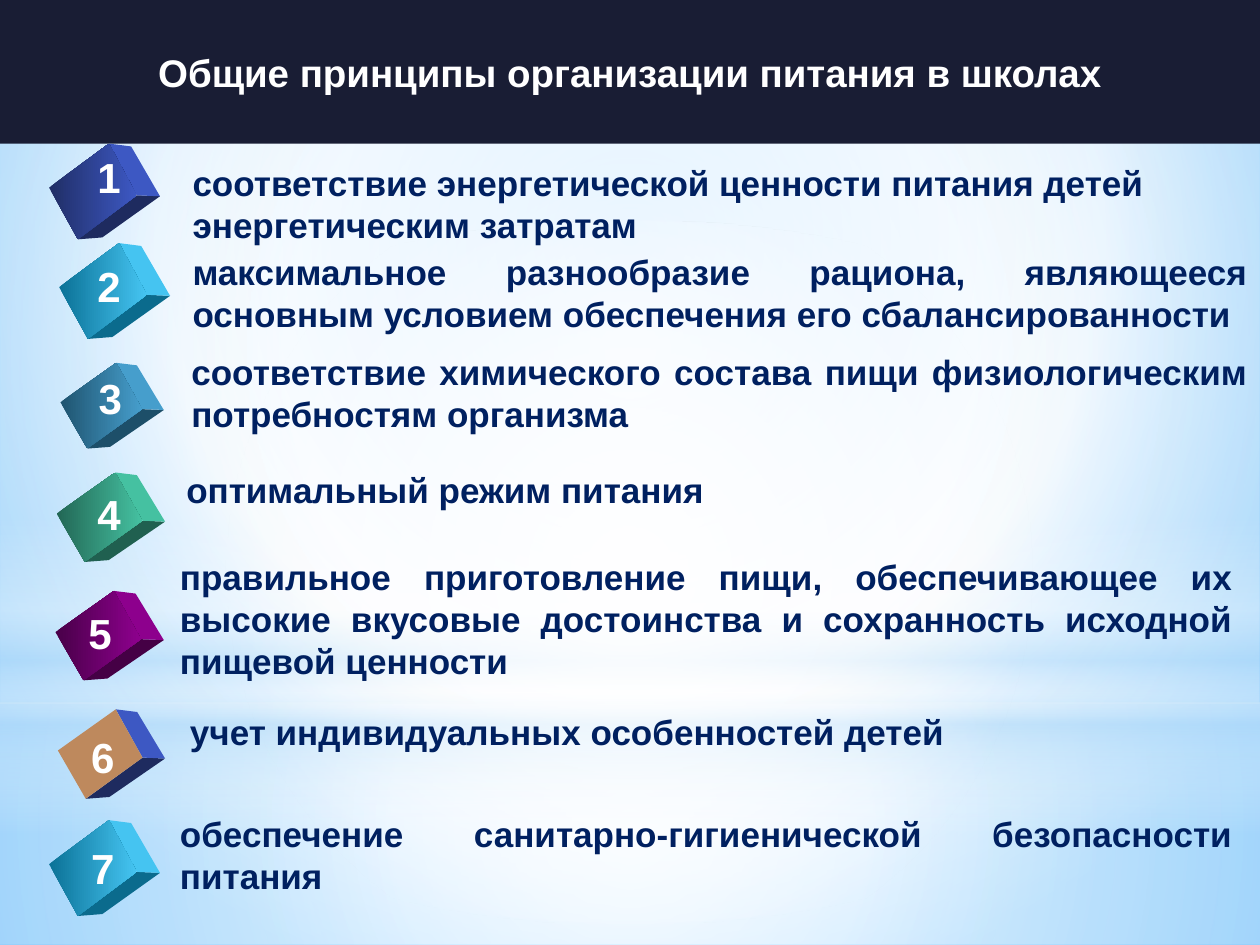
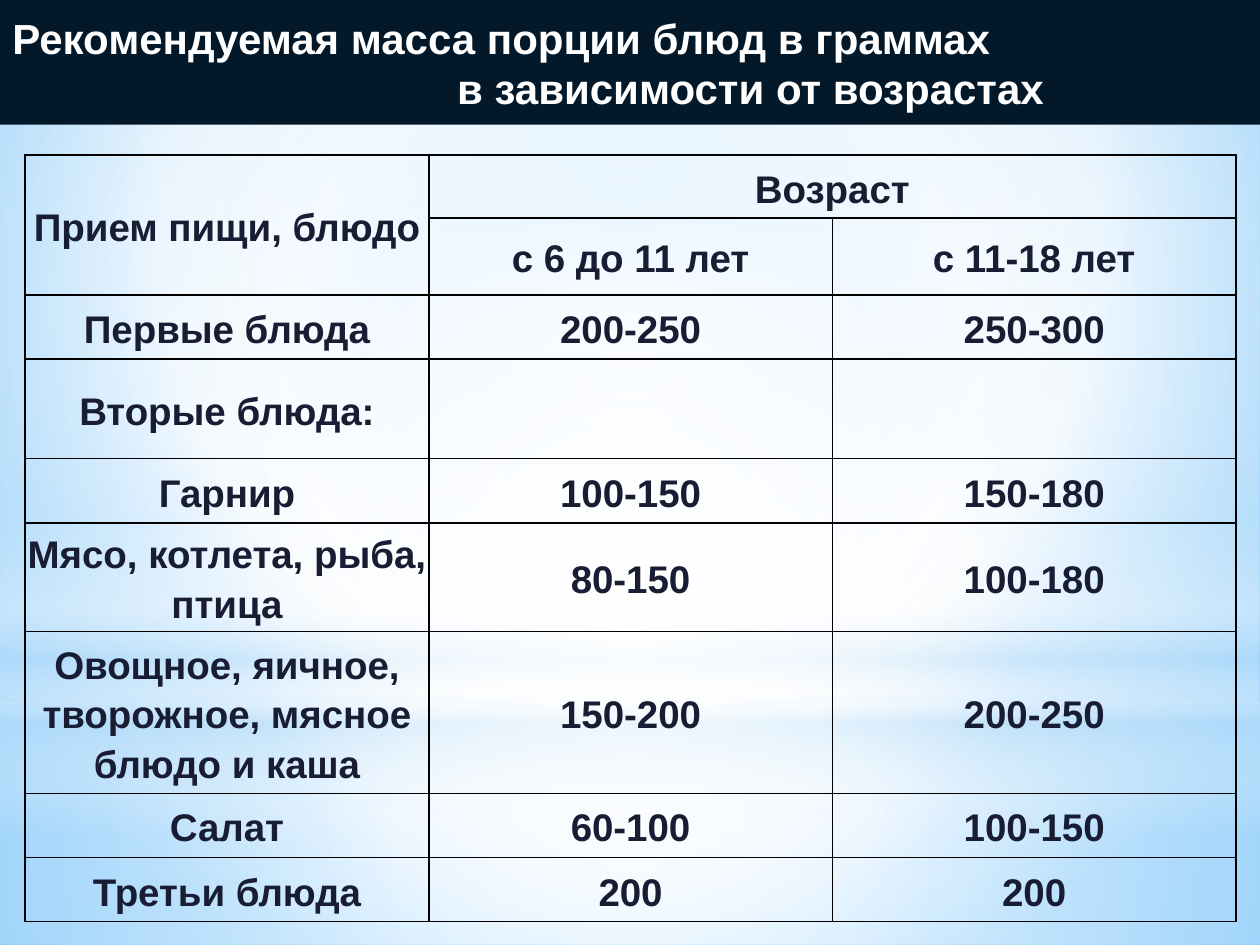
from lxml.etree import SubElement
from pptx import Presentation
from pptx.dml.color import RGBColor
from pptx.enum.shapes import MSO_SHAPE as SHAPE
from pptx.enum.text import MSO_ANCHOR as ANCHOR, PP_ALIGN as ALIGN
from pptx.oxml.ns import qn
from pptx.util import Inches, Pt

rgb = RGBColor.from_string
WHITE, NAVY, INK, BAND2 = "FFFFFF", "002060", "191D34", "031828"
SKY, SKY_DARK, MIST = "9ED5FF", "5BB9FF", "B4DCFA"
LEFT, CENTER, JUSTIFY = ALIGN.LEFT, ALIGN.CENTER, ALIGN.JUSTIFY


def set_gradient(el, stops, center=None):
    g = next(el.iter(qn("a:gradFill")))
    for child in list(g):
        g.remove(child)
    lst = SubElement(g, qn("a:gsLst"))
    for pos, color, alpha in stops:
        gs = SubElement(lst, qn("a:gs"), pos=str(pos * 1000))
        clr = SubElement(gs, qn("a:srgbClr"), val=color)
        SubElement(clr, qn("a:alpha"), val=str(alpha * 1000))
    if center:
        path = SubElement(g, qn("a:path"), path="circle")
        sides = {k: str(v * 1000) for k, v in zip("ltrb", center)}
        SubElement(path, qn("a:fillToRect"), **sides)
    else:
        SubElement(g, qn("a:lin"), ang="5400000", scaled="0")


def write(p, text, size, color, align):
    p.alignment = align
    r = p.add_run()
    r.text = text
    for k, v in {"name": "Arial", "size": Pt(size), "bold": True}.items():
        setattr(r.font, k, v)
    r.font.color.rgb = rgb(color)


prs = Presentation()
prs.slide_width, prs.slide_height = Inches(10), Inches(7.5)
blank = prs.slide_layouts[6]
s1, s2 = [prs.slides.add_slide(blank) for _ in range(2)]

master = prs.slide_master
master.background.fill.gradient()
set_gradient(master.element, [(0, SKY, 100), (60, WHITE, 100), (100, SKY_DARK, 100)],
             (20, 10, 20, 60))
middle = (50, 50, 50, 50)
glows = [
    (SHAPE.RECTANGLE, 5.58, 1.92, [(0, WHITE, 91), (37, WHITE, 76), (100, MIST, 79)], middle),
    (SHAPE.RECTANGLE, 0, 5.58, [(0, WHITE, 89), (48, WHITE, 62), (100, MIST, 79)], middle),
    (SHAPE.RECTANGLE, 4.12, 2.5, [(0, WHITE, 0), (29, WHITE, 30), (45, MIST, 40),
                                  (55, WHITE, 26), (65, MIST, 60), (100, WHITE, 0)], None),
    (SHAPE.OVAL, 1.75, 5.58, [(0, WHITE, 100), (56, WHITE, 0)], middle),
]
for i, (kind, y, h, stops, center) in enumerate(glows):
    sp = s1.shapes.add_shape(kind, 0, Inches(y), Inches(10), Inches(h))
    sp.shadow.inherit = False
    sp.line.fill.background()
    sp.fill.gradient()
    set_gradient(sp.element, stops, center)
    master.shapes.element.insert(2 + i, sp.element)

bands = [
    (s1, 1.14, INK, 22, [("Общие принципы организации питания в школах", CENTER, 0)]),
    (s2, 0.99, BAND2, 24, [("Рекомендуемая масса порции блюд в граммах", LEFT, 0),
                           ("в зависимости от возрастах", LEFT, 3.53)]),
]
for s, h, color, size, lines in bands:
    sp = s.shapes.add_shape(SHAPE.RECTANGLE, 0, 0, Inches(10), Inches(h))
    sp.shadow.inherit = False
    sp.fill.solid()
    sp.fill.fore_color.rgb = rgb(color)
    sp.line.fill.background()
    tf = sp.text_frame
    tf.vertical_anchor = ANCHOR.MIDDLE
    for i, (text, align, indent) in enumerate(lines):
        p = tf.add_paragraph() if i else tf.paragraphs[0]
        write(p, text, size, WHITE, align)
        p.line_spacing = 1.0
        if indent:
            p._p.get_or_add_pPr().set("marL", str(Inches(indent)))

BLUE, CYAN = "4E67C8", "5ECCF3"
principles = [
    ((0.39, 1.14, 0.88, 0.76), BLUE, BLUE, (0.67, 1.15), (1.43, 1.23, 8.57, 0.77), LEFT,
     "соответствие энергетической ценности питания детей энергетическим затратам"),
    ((0.47, 1.93, 0.88, 0.76), CYAN, CYAN, (0.67, 2.02), (1.43, 1.94, 8.57, 0.77), JUSTIFY,
     "максимальное разнообразие рациона, являющееся основным условием обеспечения его сбалансированности"),
    ((0.48, 2.88, 0.82, 0.68), "59A8D1", "59A8D1", (0.68, 2.91), (1.42, 2.73, 8.58, 0.77), JUSTIFY,
     "соответствие химического состава пищи физиологическим потребностям организма"),
    ((0.45, 3.75, 0.86, 0.71), "56C7AA", "56C7AA", (0.67, 3.83), (1.38, 3.67, 7.55, 0.44), LEFT,
     "оптимальный режим питания"),
    ((0.44, 4.69, 0.86, 0.71), "990099", "990099", (0.6, 4.77), (1.33, 4.36, 8.55, 1.11), JUSTIFY,
     "правильное приготовление пищи, обеспечивающее их высокие вкусовые достоинства "
     "и сохранность исходной пищевой ценности"),
    ((0.46, 5.63, 0.85, 0.71), "BE895D", BLUE, (0.62, 5.76), (1.41, 5.59, 6.43, 0.44), LEFT,
     "учет индивидуальных особенностей детей"),
    ((0.39, 6.51, 0.88, 0.76), CYAN, CYAN, (0.62, 6.64), (1.33, 6.4, 8.55, 0.77), JUSTIFY,
     "обеспечение санитарно-гигиенической безопасности питания"),
]
front = [(0, 0.46), (0.54, 0), (0.79, 0.54), (0.26, 1)]
side = [(0.54, 0), (0.74, 0.03), (1, 0.55), (0.79, 0.54)]
bottom = [(0.26, 1), (0.79, 0.54), (1, 0.55), (0.48, 0.98)]
for n, (cube, face, edge, digit_at, box, align, text) in enumerate(principles, 1):
    x, y, w, h = cube
    for points, color, shade in [(bottom, edge, -0.55), (side, edge, -0.08), (front, face, 0)]:
        pts = [(Inches(x + w * u), Inches(y + h * v)) for u, v in points]
        fb = s1.shapes.build_freeform(*pts[0])
        fb.add_line_segments(pts[1:])
        sp = fb.convert_to_shape()
        sp.shadow.inherit = False
        sp.line.fill.background()
        if points is front and face == edge:
            sp.fill.gradient()
            sp.fill.gradient_angle = 0
            for stop, dark in zip(sp.fill.gradient_stops, (-0.52, -0.08)):
                stop.color.rgb = rgb(color)
                stop.color.brightness = dark
        else:
            sp.fill.solid()
            sp.fill.fore_color.rgb = rgb(color)
            sp.fill.fore_color.brightness = shade
    for at, label, size, color, al, wrap in [
        ((*digit_at, 0.39, 0.5), str(n), 24, WHITE, CENTER, False),
        (box, text, 20, NAVY, align, True),
    ]:
        tf = s1.shapes.add_textbox(*map(Inches, at)).text_frame
        tf.word_wrap = wrap
        write(tf.paragraphs[0], label, size, color, al)

rows = [
    ("Прием пищи, блюдо", "Возраст", ""),
    ("", "с 6 до 11 лет", "с 11-18 лет"),
    ("Первые блюда", "200-250", "250-300"),
    ("Вторые блюда:", "", ""),
    ("Гарнир", "100-150", "150-180"),
    ("Мясо, котлета, рыба, птица", "80-150", "100-180"),
    ("Овощное, яичное, творожное, мясное блюдо и каша", "150-200", "200-250"),
    ("Салат", "60-100", "100-150"),
    ("Третьи блюда", "200", "200"),
]
heights = [0.5, 0.61, 0.51, 0.79, 0.51, 0.85, 1.27, 0.51, 0.51]
frame = s2.shapes.add_table(len(rows), 3, Inches(0.2), Inches(1.23), Inches(9.61), Inches(sum(heights)))
table = frame.table
table.first_row = table.horz_banding = False
for row, h in zip(table.rows, heights):
    row.height = Inches(h)
cell_format = {"vertical_anchor": ANCHOR.MIDDLE}
cell_format.update({f"margin_{k}": Inches(0.01) for k in ("left", "right", "top", "bottom")})
for i, row in enumerate(rows):
    for j, text in enumerate(row):
        cell = table.cell(i, j)
        for k, v in cell_format.items():
            setattr(cell, k, v)
        tcPr = cell._tc.get_or_add_tcPr()
        for edge in ("lnL", "lnR", "lnT", "lnB"):
            ln = SubElement(tcPr, qn(f"a:{edge}"), w=str(Pt(1)))
            SubElement(SubElement(ln, qn("a:solidFill")), qn("a:srgbClr"), val="000000")
        cell.fill.background()
        if text:
            p = cell.text_frame.paragraphs[0]
            write(p, text, 22, INK, CENTER)
            p.line_spacing, p.space_after = 1.15, Pt(1)
table.cell(0, 0).merge(table.cell(1, 0))
table.cell(0, 1).merge(table.cell(0, 2))

prs.save("out.pptx")
